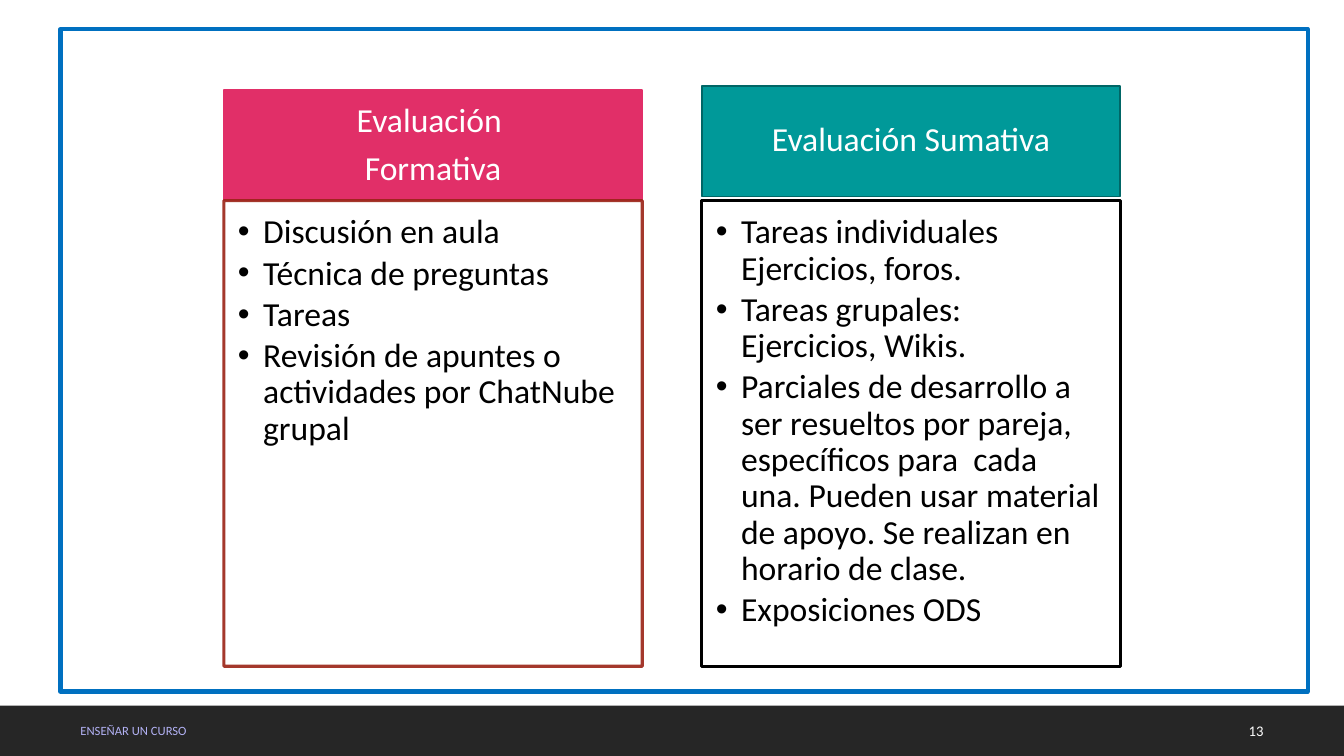
from dataclasses import dataclass

from lxml.etree import SubElement
from pptx import Presentation
from pptx.dml.color import RGBColor
from pptx.enum.shapes import MSO_SHAPE
from pptx.enum.text import MSO_ANCHOR, PP_ALIGN
from pptx.oxml.ns import qn
from pptx.util import Inches, Pt


@dataclass(frozen=True)
class Theme:
    font: str = "Calibri"
    white: str = "FFFFFF"
    black: str = "000000"
    footer_bar: str = "262626"
    footer_text: str = "B2B1F4"
    frame: str = "0070C0"
    pink: str = "E12F68"
    brick: str = "9B2316"
    teal: str = "009999"
    dark_teal: str = "006666"
    body_size: float = 24
    footer_size: float = 9
    number_size: float = 10.5


class SlideBuilder:
    def __init__(self, slide, theme):
        self.slide = slide
        self.theme = theme

    def rectangle(self, box, fill=None, line=None, line_width=1.25):
        shape = self.slide.shapes.add_shape(MSO_SHAPE.RECTANGLE, *map(Inches, box))
        shape.shadow.inherit = False
        if fill:
            shape.fill.solid()
            shape.fill.fore_color.rgb = RGBColor.from_string(fill)
        else:
            shape.fill.background()
        if line:
            shape.line.color.rgb = RGBColor.from_string(line)
            shape.line.width = Pt(line_width)
        else:
            shape.line.fill.background()
        return shape

    def set_text(self, shape, lines, size, color, align=PP_ALIGN.LEFT,
                 anchor=MSO_ANCHOR.MIDDLE, insets=(0.1, 0.05, 0.1, 0.05),
                 space_after=None, bullets=False):
        frame = shape.text_frame
        frame.text = "\n".join(lines)
        frame.word_wrap = True
        frame.vertical_anchor = anchor
        (frame.margin_left, frame.margin_top,
         frame.margin_right, frame.margin_bottom) = map(Inches, insets)
        for paragraph in frame.paragraphs:
            paragraph.alignment = align
            if space_after:
                paragraph.line_spacing = 0.9
                paragraph.space_after = Pt(space_after)
            if bullets:
                properties = paragraph._p.get_or_add_pPr()
                properties.set("marL", str(Inches(0.25)))
                properties.set("indent", str(-Inches(0.25)))
                SubElement(properties, qn("a:buFont")).set("typeface", "Arial")
                SubElement(properties, qn("a:buChar")).set("char", "•")
            for run in paragraph.runs:
                run.font.name = self.theme.font
                run.font.size = Pt(size)
                run.font.color.rgb = RGBColor.from_string(color)

    def label(self, box, text, size, color, align=PP_ALIGN.LEFT):
        shape = self.slide.shapes.add_textbox(*map(Inches, box))
        self.set_text(shape, [text], size, color, align)

    def header(self, box, lines, fill, line):
        shape = self.rectangle(box, fill, line)
        self.set_text(shape, lines, self.theme.body_size, self.theme.white,
                      PP_ALIGN.CENTER, insets=(0.19, 0.11, 0.19, 0.11),
                      space_after=0.35 * self.theme.body_size)

    def bullet_panel(self, box, items, line, opaque_line):
        shape = self.rectangle(box, self.theme.white, line, 2.25)
        # Slight transparency
        properties = shape._element.spPr
        parts = [properties.find(qn("a:solidFill"))]
        if not opaque_line:
            parts.append(properties.find(qn("a:ln")))
        for part in parts:
            for color in part.iter(qn("a:srgbClr")):
                SubElement(color, qn("a:alpha")).set("val", "90000")
        self.set_text(shape, items, self.theme.body_size, self.theme.black,
                      anchor=MSO_ANCHOR.TOP, insets=(0.14, 0.14, 0.19, 0.21),
                      space_after=0.15 * self.theme.body_size, bullets=True)


def main():
    theme = Theme()
    presentation = Presentation()
    presentation.slide_width = Inches(13.33)
    presentation.slide_height = Inches(7.5)
    slide = presentation.slides.add_slide(presentation.slide_layouts[6])
    builder = SlideBuilder(slide, theme)

    # Footer
    builder.rectangle((0, 7, 13.33, 0.5), theme.footer_bar)
    builder.label((0.7, 7.05, 7.46, 0.4), "ENSEÑAR UN CURSO",
                  theme.footer_size, theme.footer_text)
    builder.label((11.95, 7.05, 0.68, 0.4), "13",
                  theme.number_size, theme.white, PP_ALIGN.RIGHT)

    # Evaluation columns: left, header top, title, header colours, panel line, items
    columns = [
        (2.22, 0.89, ["Evaluación ", "Formativa"], theme.pink, theme.pink, theme.brick,
         ["Discusión en aula",
          "Técnica de preguntas",
          "Tareas",
          "Revisión de apuntes o actividades por ChatNube grupal"]),
        (6.96, 0.85, ["Evaluación Sumativa"], theme.teal, theme.dark_teal, theme.black,
         ["Tareas individuales Ejercicios, foros.",
          "Tareas grupales: Ejercicios, Wikis.",
          "Parciales de desarrollo a ser resueltos por pareja, específicos para  cada una. "
          "Pueden usar material de apoyo. Se realizan en horario de clase.",
          "Exposiciones ODS"]),
    ]
    for left, top, title, fill, line, panel_line, items in columns:
        builder.header((left, top, 4.15, 1.1), title, fill, line)
        builder.bullet_panel((left, 1.99, 4.15, 4.62), items, panel_line,
                             opaque_line=panel_line == theme.black)

    # Outer frame
    builder.rectangle((0.6, 0.29, 12.37, 6.57), line=theme.frame, line_width=3)

    presentation.save("out.pptx")


if __name__ == "__main__":
    main()
